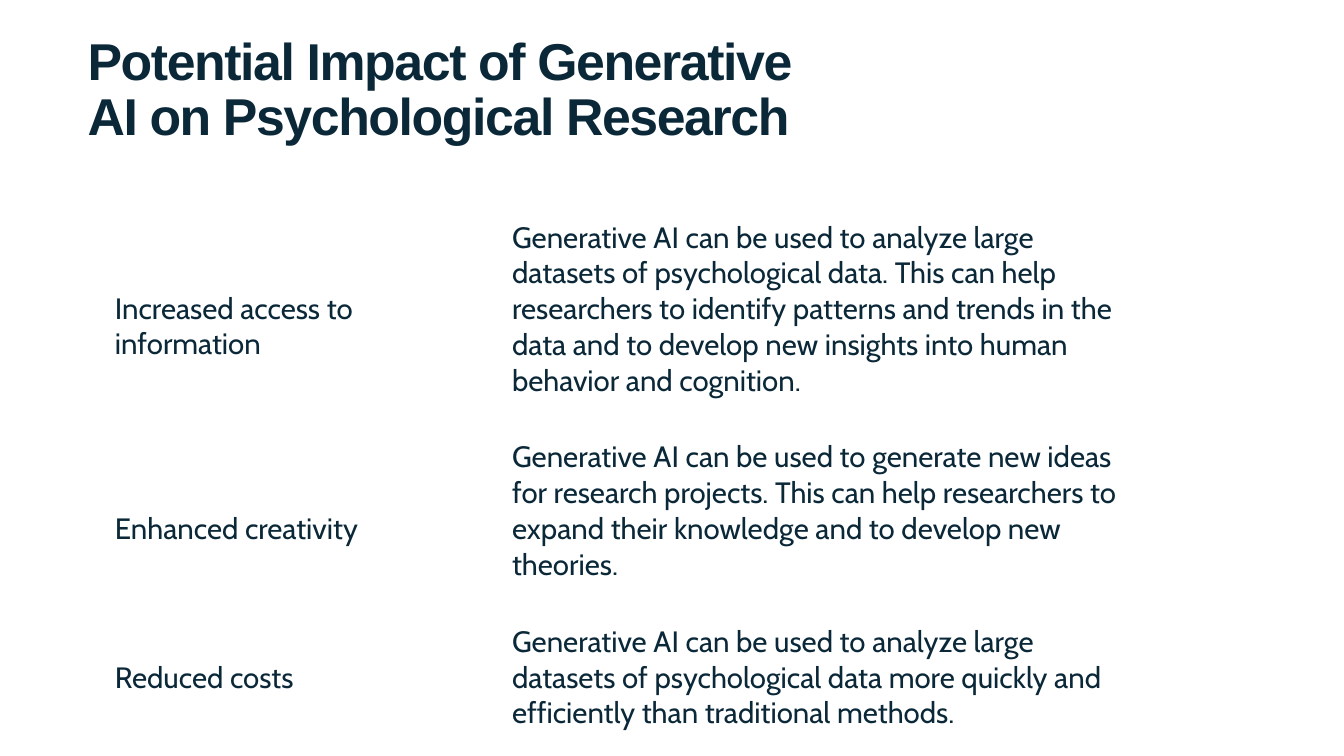
from dataclasses import dataclass

from pptx import Presentation
from pptx.dml.color import RGBColor
from pptx.enum.text import MSO_ANCHOR
from pptx.slide import Slide
from pptx.table import _Cell
from pptx.text.text import TextFrame
from pptx.util import Inches, Pt

MIDDLE = MSO_ANCHOR.MIDDLE
TOP = MSO_ANCHOR.TOP


@dataclass(frozen=True)
class Theme:
    ink: RGBColor = RGBColor(0x0B, 0x28, 0x39)
    title_font: str = "Arial"
    body_font: str = "Cabin"
    title_size: int = 37
    body_size: int = 21
    title_tracking: int = -100


@dataclass(frozen=True)
class Impact:
    name: str
    description: str
    height: float


THEME = Theme()
TITLE = "Potential Impact of Generative AI on Psychological Research"
COLUMN_WIDTHS = (3.02, 0.92, 6.24, 0.92)
NAME_COLUMN, DESCRIPTION_COLUMN = 0, 2
CELL_INSET = 0.03
IMPACTS = (
    Impact(
        "Increased access to information",
        "Generative AI can be used to analyze large datasets of psychological data. "
        "This can help researchers to identify patterns and trends in the data and "
        "to develop new insights into human behavior and cognition.",
        2.18,
    ),
    Impact(
        "Enhanced creativity",
        "Generative AI can be used to generate new ideas for research projects. "
        "This can help researchers to expand their knowledge and to develop new theories.",
        1.83,
    ),
    Impact(
        "Reduced costs",
        "Generative AI can be used to analyze large datasets of psychological data "
        "more quickly and efficiently than traditional methods.",
        1.13,
    ),
)


def write(tf: TextFrame, text: str, font: str, size: int, bold: bool = False) -> None:
    tf.text = text
    f = tf.paragraphs[0].runs[0].font
    f.name, f.size, f.bold = font, Pt(size), bold
    f.color.rgb = THEME.ink


def add_title(s: Slide) -> None:
    sp = s.shapes.add_textbox(Inches(0.77), Inches(0.27), Inches(7.72), Inches(1.27))
    tf = sp.text_frame
    tf.word_wrap = True
    tf.vertical_anchor = MIDDLE
    write(tf, TITLE, THEME.title_font, THEME.title_size, bold=True)
    p = tf.paragraphs[0]
    p.line_spacing = 0.9
    p.runs[0].font._element.set("spc", str(THEME.title_tracking))


def fill_cell(cell: _Cell, text: str, anchor: MSO_ANCHOR) -> None:
    cell.vertical_anchor = anchor
    write(cell.text_frame, text, THEME.body_font, THEME.body_size)


def add_impacts(s: Slide) -> None:
    table = s.shapes.add_table(
        len(IMPACTS), len(COLUMN_WIDTHS), Inches(1.11), Inches(2.15),
        Inches(sum(COLUMN_WIDTHS)), Inches(sum(i.height for i in IMPACTS)),
    ).table
    table.first_row = False
    table.horz_banding = False
    for column, width in zip(table.columns, COLUMN_WIDTHS):
        column.width = Inches(width)
    for cell in table.iter_cells():
        cell.fill.background()
        cell.margin_left = cell.margin_right = Inches(CELL_INSET)
        cell.margin_top = cell.margin_bottom = Inches(CELL_INSET)
    for row, impact in zip(table.rows, IMPACTS):
        row.height = Inches(impact.height)
        fill_cell(row.cells[NAME_COLUMN], impact.name, MIDDLE)
        fill_cell(row.cells[DESCRIPTION_COLUMN], impact.description, TOP)


def main() -> None:
    prs = Presentation()
    prs.slide_width, prs.slide_height = Inches(13.33), Inches(7.5)
    s = prs.slides.add_slide(prs.slide_layouts[6])
    add_title(s)
    add_impacts(s)
    prs.save("out.pptx")


if __name__ == "__main__":
    main()
